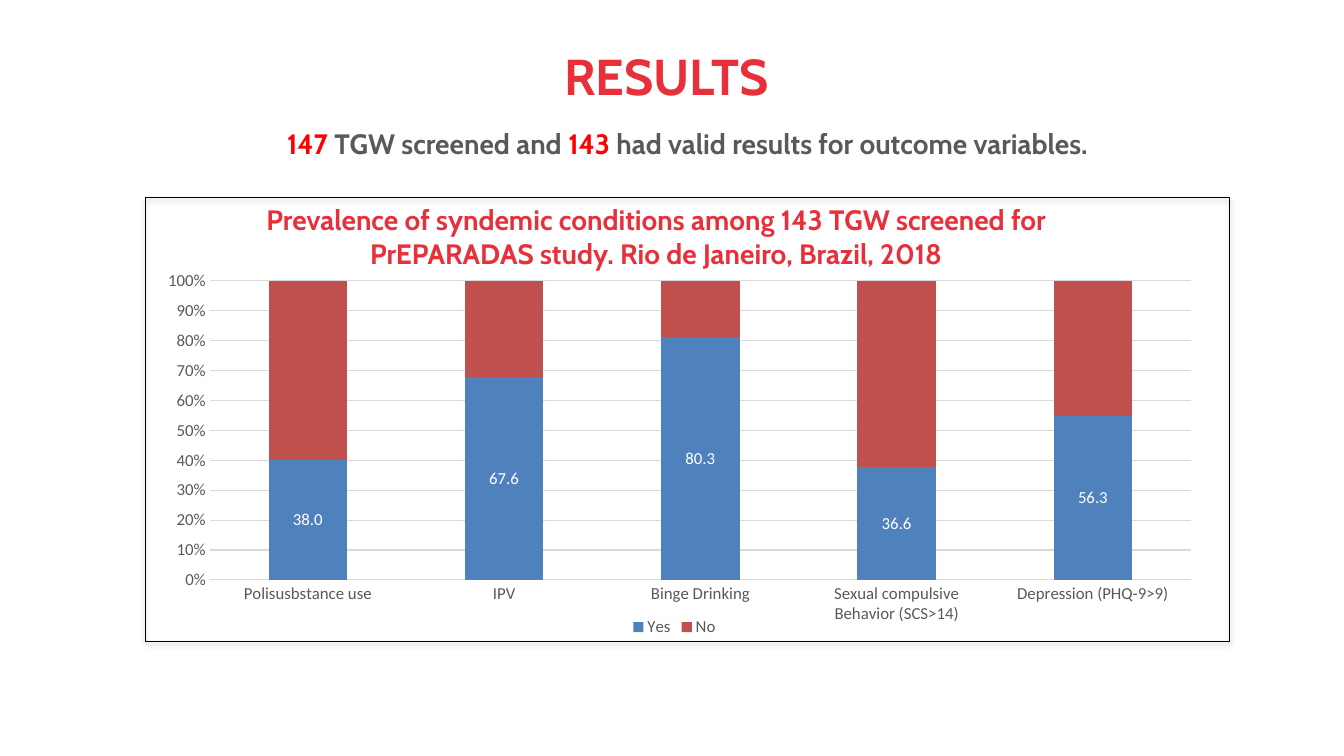
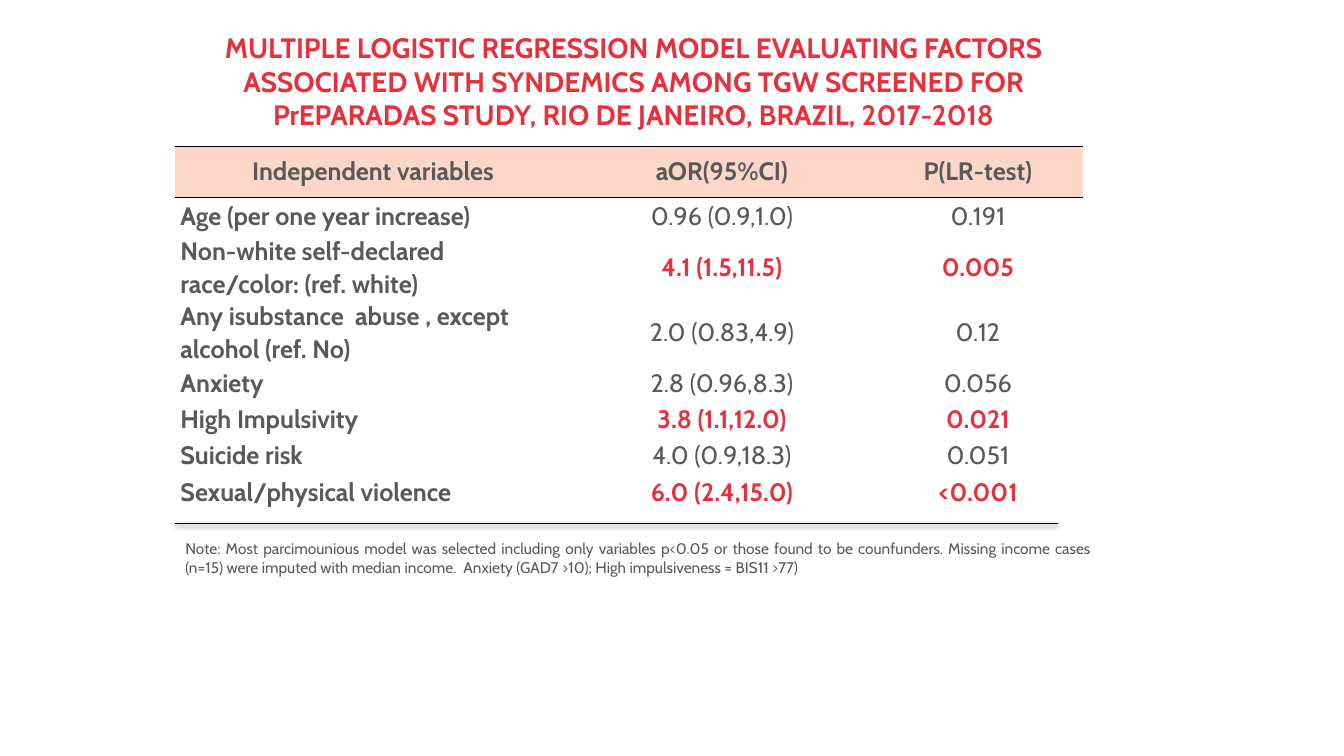
from lxml.etree import SubElement
from pptx import Presentation
from pptx.chart.data import CategoryChartData
from pptx.dml.color import RGBColor
from pptx.enum.chart import XL_CHART_TYPE, XL_LEGEND_POSITION, XL_TICK_MARK
from pptx.enum.shapes import MSO_CONNECTOR, MSO_SHAPE
from pptx.enum.text import MSO_ANCHOR, PP_ALIGN
from pptx.oxml.ns import qn
from pptx.util import Inches, Pt

RED, BRIGHT_RED, GREY = "E8303B", "FF0000", "595959"
BLACK, WHITE, GRID_GREY = "000000", "FFFFFF", "D9D9D9"
YES_BLUE, NO_RED, HEADER_PINK = "4F81BD", "C0504D", "FCD7C8"
TEXT_FONT, CHART_FONT = "Cabin", "Calibri"
PLAIN_TABLE = "{2D5ABB26-0587-4C30-8999-92F81FD0307C}"
CENTER, LEFT, JUSTIFY = PP_ALIGN.CENTER, PP_ALIGN.LEFT, PP_ALIGN.JUSTIFY


def color(value):
    return RGBColor.from_string(value)


def assign(target, **values):
    for name, value in values.items():
        setattr(target, name, value)


def style_font(font, size, shade, bold=False, name=TEXT_FONT):
    assign(font, size=Pt(size), bold=bold, name=name)
    font.color.rgb = color(shade)


def style_line(line, shade, width):
    line.color.rgb = color(shade)
    line.width = Pt(width)


def add_shadow(shape, opacity, distance):
    effects = SubElement(shape._element.spPr, qn("a:effectLst"))
    shadow = SubElement(effects, qn("a:outerShdw"), blurRad=str(Pt(3.1)),
                        dist=str(Pt(distance)), dir="5400000", rotWithShape="0")
    tint = SubElement(shadow, qn("a:srgbClr"), val=BLACK)
    SubElement(tint, qn("a:alpha"), val=str(opacity * 1000))


def add_border(cell, side, position):
    properties = cell._tc.get_or_add_tcPr()
    border = properties.makeelement(qn(f"a:ln{side}"), {"w": str(Pt(1))})
    fill = SubElement(border, qn("a:solidFill"))
    SubElement(fill, qn("a:srgbClr"), val=BLACK)
    properties.insert(position, border)


class SlideBuilder:
    """Lengths are percentages of the slide's width and height."""

    def __init__(self):
        self.deck = Presentation()
        assign(self.deck, slide_width=Inches(13.33), slide_height=Inches(7.5))
        self.page = None

    def new_page(self):
        self.page = self.deck.slides.add_slide(self.deck.slide_layouts[6])

    def across(self, share):
        return round(self.deck.slide_width * share / 100)

    def down(self, share):
        return round(self.deck.slide_height * share / 100)

    def area(self, left, top, width, height):
        return self.across(left), self.down(top), self.across(width), self.down(height)

    def text(self, area, spans, size, bold=True, align=CENTER, anchor=MSO_ANCHOR.TOP):
        box = self.page.shapes.add_textbox(*self.area(*area))
        assign(box.text_frame, word_wrap=True, vertical_anchor=anchor)
        para = box.text_frame.paragraphs[0]
        para.alignment = align
        for words, shade in spans:
            span = para.add_run()
            span.text = words
            style_font(span.font, size, shade, bold)

    def title(self, area, words, size):
        self.text(area, [(words, RED)], size, anchor=MSO_ANCHOR.MIDDLE)

    def frame(self, area):
        box = self.page.shapes.add_shape(MSO_SHAPE.RECTANGLE, *self.area(*area))
        box.fill.background()
        style_line(box.line, BLACK, 0.75)
        add_shadow(box, 35, 1.8)

    def rule(self, left, right, top):
        height = self.down(top)
        line = self.page.shapes.add_connector(
            MSO_CONNECTOR.STRAIGHT, self.across(left), height, self.across(right), height)
        style_line(line.line, BLACK, 0.5)
        add_shadow(line, 38, 1.6)

    def stacked_chart(self, area, categories, series, labels, plot_area):
        data = CategoryChartData()
        data.categories = categories
        for name, values, _ in series:
            data.add_series(name, values)
        chart = self.page.shapes.add_chart(
            XL_CHART_TYPE.COLUMN_STACKED_100, *self.area(*area), data).chart
        assign(chart, has_title=False, has_legend=True)
        assign(chart.legend, position=XL_LEGEND_POSITION.BOTTOM, include_in_layout=False)
        style_font(chart.font, 12, GREY, name=CHART_FONT)
        style_font(chart.legend.font, 12, GREY, name=CHART_FONT)
        plot = chart.plots[0]
        assign(plot, gap_width=150, overlap=100, vary_by_categories=False)
        for item, (_, _, shade) in zip(plot.series, series):
            item.format.fill.solid()
            item.format.fill.fore_color.rgb = color(shade)
        self.point_labels(plot.series[0], labels)
        for axis in (chart.category_axis, chart.value_axis):
            assign(axis, major_tick_mark=XL_TICK_MARK.NONE, minor_tick_mark=XL_TICK_MARK.NONE)
            style_font(axis.tick_labels.font, 12, GREY, name=CHART_FONT)
        style_line(chart.category_axis.format.line, GRID_GREY, 0.75)
        chart.value_axis.format.line.fill.background()
        style_line(chart.value_axis.major_gridlines.format.line, GRID_GREY, 0.75)
        assign(chart.value_axis.tick_labels, number_format="0%", number_format_is_linked=False)
        self.place_plot(chart, plot_area)

    def point_labels(self, series, labels):
        series.data_labels.show_value = True
        style_font(series.data_labels.font, 12, WHITE, name=CHART_FONT)
        for index, words in enumerate(labels):
            span = series.points[index].data_label.text_frame.paragraphs[0].add_run()
            span.text = words
            style_font(span.font, 12, WHITE, name=CHART_FONT)

    def place_plot(self, chart, plot_area):
        plot_element = chart._chartSpace.chart.plotArea
        layout = plot_element.find(qn("c:layout"))
        if layout is None:
            layout = plot_element.makeelement(qn("c:layout"), {})
            plot_element.insert(0, layout)
        manual = SubElement(layout, qn("c:manualLayout"))
        settings = [("layoutTarget", "inner"), ("xMode", "edge"), ("yMode", "edge")]
        for tag, value in settings + list(zip("xywh", plot_area)):
            SubElement(manual, qn(f"c:{tag}"), val=str(value))

    def table(self, left, top, widths, heights, header, rows):
        area = self.area(left, top, sum(widths), sum(heights))
        table = self.page.shapes.add_table(len(heights), len(widths), *area).table
        assign(table, first_row=False, horz_banding=False)
        table._tbl.tblPr.find(qn("a:tableStyleId")).text = PLAIN_TABLE
        for column, width in zip(table.columns, widths):
            column.width = self.across(width)
        for row, height in zip(table.rows, heights):
            row.height = self.down(height)
        for index, words in enumerate(header):
            cell = table.cell(0, index)
            self.cell(cell, words, GREY, True, CENTER, 1.0)
            cell.fill.solid()
            cell.fill.fore_color.rgb = color(HEADER_PINK)
            for position, side in enumerate("TB"):
                add_border(cell, side, position)
        for number, row in enumerate(rows, 1):
            significant = float(row[-1].strip("<")) < 0.05
            for index, words in enumerate(row):
                is_name = index == 0
                cell = table.cell(number, index)
                self.cell(cell, words, RED if significant and not is_name else GREY,
                          is_name or significant, LEFT if is_name else CENTER, 1.07)
                cell.fill.background()

    def cell(self, cell, words, shade, bold, align, spacing):
        assign(cell, margin_left=Inches(0.05), margin_right=Inches(0.05),
               margin_top=0, margin_bottom=0, vertical_anchor=MSO_ANCHOR.MIDDLE)
        para = cell.text_frame.paragraphs[0]
        assign(para, alignment=align, line_spacing=spacing)
        span = para.add_run()
        span.text = words
        style_font(span.font, 18, shade, bold)


def build_prevalence(builder):
    builder.new_page()
    builder.title((5.75, 1.6, 87.7, 16.67), "RESULTS", 36)
    builder.stacked_chart(
        (10.8, 20.67, 78.77, 64.13),
        ["Polisusbstance use", "IPV", "Binge Drinking",
         "Sexual compulsive Behavior (SCS>14)", "Depression (PHQ-9>9)"],
        [("Yes", (40, 68, 81.3, 37.8, 54.7), YES_BLUE),
         ("No", (60, 32, 19, 62, 45), NO_RED)],
        ["38.0", "67.6", "80.3", "36.6", "56.3"],
        (0.061, 0.257, 0.927, 0.617))
    builder.text((10.8, 16.13, 80.72, 6.67),
                 [("147 ", BRIGHT_RED), ("TGW screened and ", GREY), ("143 ", BRIGHT_RED),
                  ("had valid results for outcome variables.", GREY)], 20)
    builder.text((14.4, 26.13, 68.87, 10.27),
                 [("Prevalence of syndemic conditions among 143 TGW screened for "
                   "PrEPARADAS study. Rio de Janeiro, Brazil, 2018", RED)], 20)
    builder.frame((10.8, 26.13, 80.72, 58.67))


def build_regression(builder):
    builder.new_page()
    builder.title((11.33, 3.73, 71.64, 14),
                  "MULTIPLE LOGISTIC REGRESSION MODEL EVALUATING FACTORS ASSOCIATED WITH "
                  "SYNDEMICS AMONG TGW SCREENED FOR PrEPARADAS STUDY, RIO DE JANEIRO, "
                  "BRAZIL, 2017-2018", 20)
    builder.text((13.05, 70.67, 68.94, 8.93),
                 [("Note: Most parcimounious model was selected including only variables "
                   "p<0.05 or those found to be counfunders. Missing income cases (n=15) "
                   "were imputed with median income.  Anxiety (GAD7 >10); High "
                   "impulsiveness = BIS11 >77)", GREY)], 11, bold=False, align=JUSTIFY)
    builder.table(
        13.05, 19.33, (29.41, 22.51, 15.6), (6.8, 4.8, 8.67) + (4.8,) * 5,
        ("Independent variables", "aOR(95%CI)", "P(LR-test)"),
        [("Age (per one year increase)", "0.96 (0.9,1.0)", "0.191"),
         ("Non-white self-declared race/color: (ref. white)", "4.1 (1.5,11.5)", "0.005"),
         ("Any isubstance  abuse , except alcohol (ref. No)", "2.0 (0.83,4.9)", "0.12"),
         ("Anxiety", "2.8 (0.96,8.3)", "0.056"),
         ("High Impulsivity", "3.8 (1.1,12.0)", "0.021"),
         ("Suicide risk", "4.0 (0.9,18.3)", "0.051"),
         ("Sexual/physical violence", "6.0 (2.4,15.0)", "<0.001")])
    builder.rule(13.05, 78.69, 69.2)


def main():
    builder = SlideBuilder()
    build_prevalence(builder)
    build_regression(builder)
    builder.deck.save("out.pptx")


if __name__ == "__main__":
    main()
